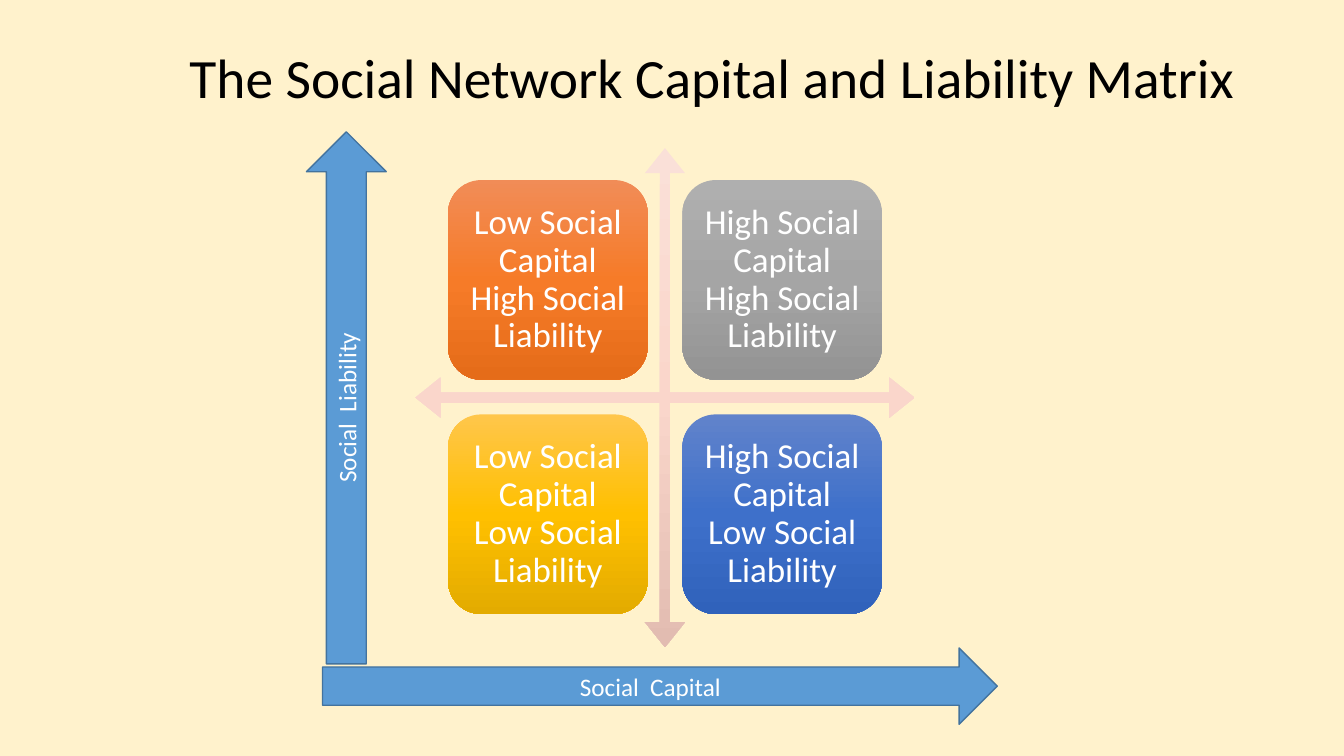
from copy import deepcopy
from dataclasses import dataclass

from pptx import Presentation
from pptx.dml.color import RGBColor
from pptx.enum.shapes import MSO_SHAPE as Preset
from pptx.enum.text import MSO_ANCHOR as Anchor, PP_ALIGN as Align
from pptx.oxml.ns import qn
from pptx.util import Pt


@dataclass(frozen=True)
class Theme:
    font: str = "Calibri"
    background: str = "FFF2CC"
    title: str = "000000"
    label: str = "FFFFFF"
    axis: str = "5B9BD5"
    axis_line: str = "43739E"
    cross: tuple = ("FAE0D8", "FAD6CB", "E2BCB1")
    orange: tuple = ("F18C57", "F67B28", "E56C19")
    gray: tuple = ("AFAFAF", "A5A5A5", "939393")
    gold: tuple = ("FFC64B", "FFC000", "E3AB00")
    blue: tuple = ("6183CB", "3E70CA", "3062BB")
    title_size: float = 39.6
    tile_size: float = 25
    axis_size: float = 18


class MatrixSlide:
    """Draws the parts of a matrix diagram on one slide in a shared theme."""

    def __init__(self, slide, theme):
        self.slide = slide
        self.theme = theme
        background = slide.background.fill
        background.solid()
        background.fore_color.rgb = RGBColor.from_string(theme.background)

    def set_text(self, shape, text, size, color, align=Align.CENTER, spacing=None):
        frame = shape.text_frame
        frame.word_wrap = True
        frame.vertical_anchor = Anchor.MIDDLE
        paragraph = frame.paragraphs[0]
        paragraph.text = text
        paragraph.alignment = align
        paragraph.line_spacing = spacing
        paragraph.font.name = self.theme.font
        paragraph.font.size = Pt(size)
        paragraph.font.color.rgb = RGBColor.from_string(color)

    def title(self, text, *box):
        shape = self.slide.shapes.add_textbox(*map(Pt, box))
        self.set_text(shape, text, self.theme.title_size, self.theme.title, Align.LEFT, 0.9)

    def shape(self, preset, *box):
        shape = self.slide.shapes.add_shape(preset, *map(Pt, box))
        shape.shadow.inherit = False
        return shape

    def gradient_shape(self, preset, colors, *box):
        shape = self.shape(preset, *box)
        shape.line.fill.background()
        shape.fill.gradient()
        shape.fill.gradient_angle = 270
        stop_list = shape._element.spPr.find(qn("a:gradFill")).find(qn("a:gsLst"))
        stop_list.insert(1, deepcopy(stop_list[0]))
        for stop, position, color in zip(shape.fill.gradient_stops, (0, 0.5, 1), colors):
            stop.position = position
            stop.color.rgb = RGBColor.from_string(color)
        return shape

    def cross(self, *box):
        shape = self.gradient_shape(Preset.QUAD_ARROW, self.theme.cross, *box)
        for index, ratio in enumerate((0.02, 0.04, 0.05)):
            shape.adjustments[index] = ratio

    def tile(self, text, colors, *box):
        shape = self.gradient_shape(Preset.ROUNDED_RECTANGLE, colors, *box)
        frame = shape.text_frame
        frame.margin_left = frame.margin_right = Pt(7.2)
        frame.margin_top = frame.margin_bottom = Pt(7.2)
        self.set_text(shape, text, self.theme.tile_size, self.theme.label, spacing=0.9)

    def axis(self, preset, text, *box, direction="horz"):
        shape = self.shape(preset, *box)
        shape.fill.solid()
        shape.fill.fore_color.rgb = RGBColor.from_string(self.theme.axis)
        shape.line.color.rgb = RGBColor.from_string(self.theme.axis_line)
        shape.line.width = Pt(1)
        self.set_text(shape, text, self.theme.axis_size, self.theme.label)
        shape.text_frame._txBody.bodyPr.set("vert", direction)


def main():
    presentation = Presentation()
    presentation.slide_width, presentation.slide_height = Pt(960), Pt(540)
    theme = Theme()
    slide = presentation.slides.add_slide(presentation.slide_layouts[6])
    matrix = MatrixSlide(slide, theme)

    matrix.title("The Social Network Capital and Liability Matrix", 128.2, 25.9, 762.5, 62.6)
    matrix.cross(296.8, 105.8, 356.4, 356.4)

    left, top, side, pitch = 320, 128.6, 142.6, 167.4
    rows = (("High", (theme.orange, theme.gray)), ("Low", (theme.gold, theme.blue)))
    for row, (liability, row_colors) in enumerate(rows):
        for column, (capital, colors) in enumerate(zip(("Low", "High"), row_colors)):
            text = f"{capital} Social Capital {liability} Social Liability"
            matrix.tile(text, colors, left + column * pitch, top + row * pitch, side, side)

    matrix.axis(Preset.UP_ARROW, "Social  Liability", 218.9, 94.2, 57, 380, direction="vert270")
    matrix.axis(Preset.RIGHT_ARROW, "Social  Capital", 230.4, 462.8, 482, 54.6)
    presentation.save("out.pptx")


if __name__ == "__main__":
    main()
